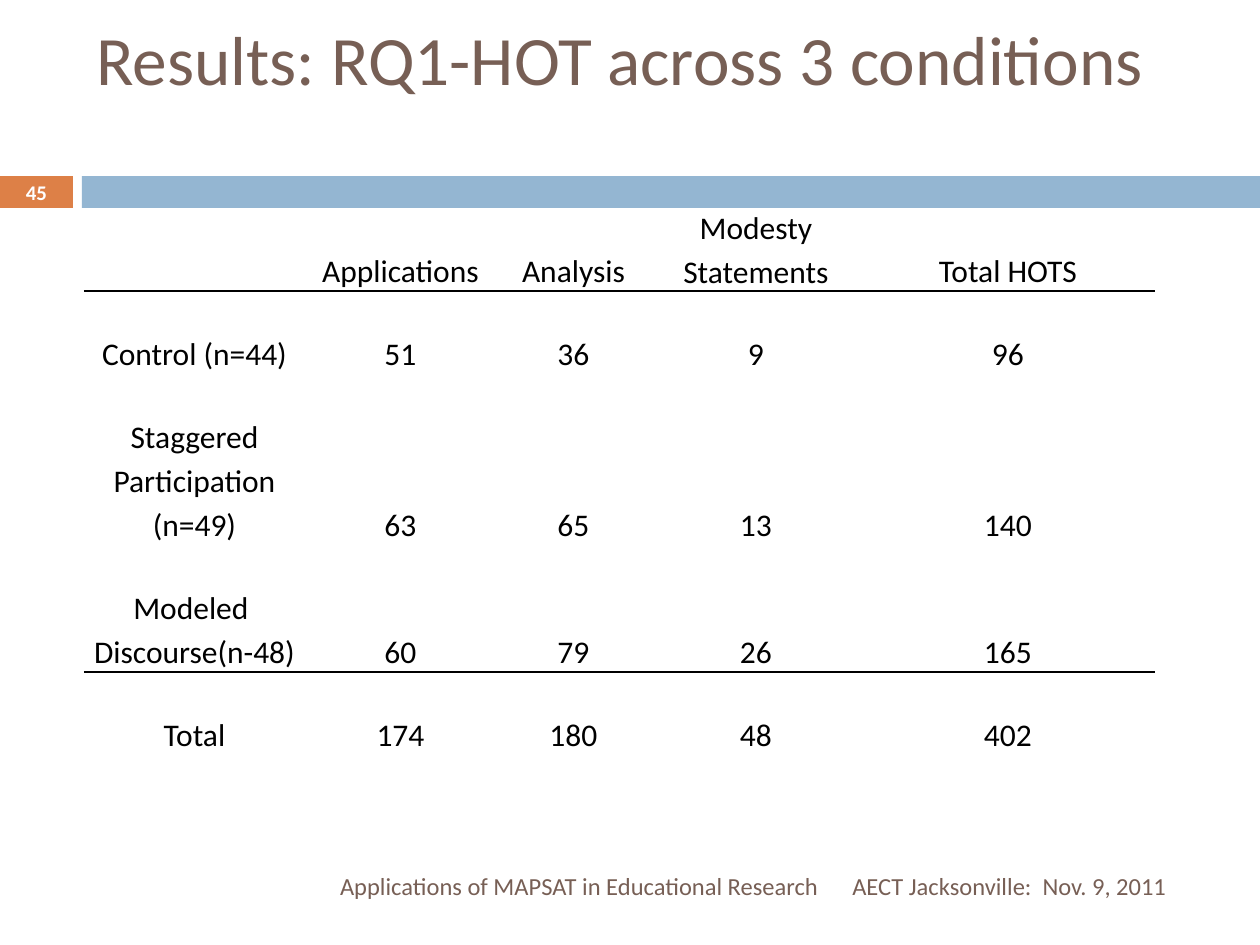
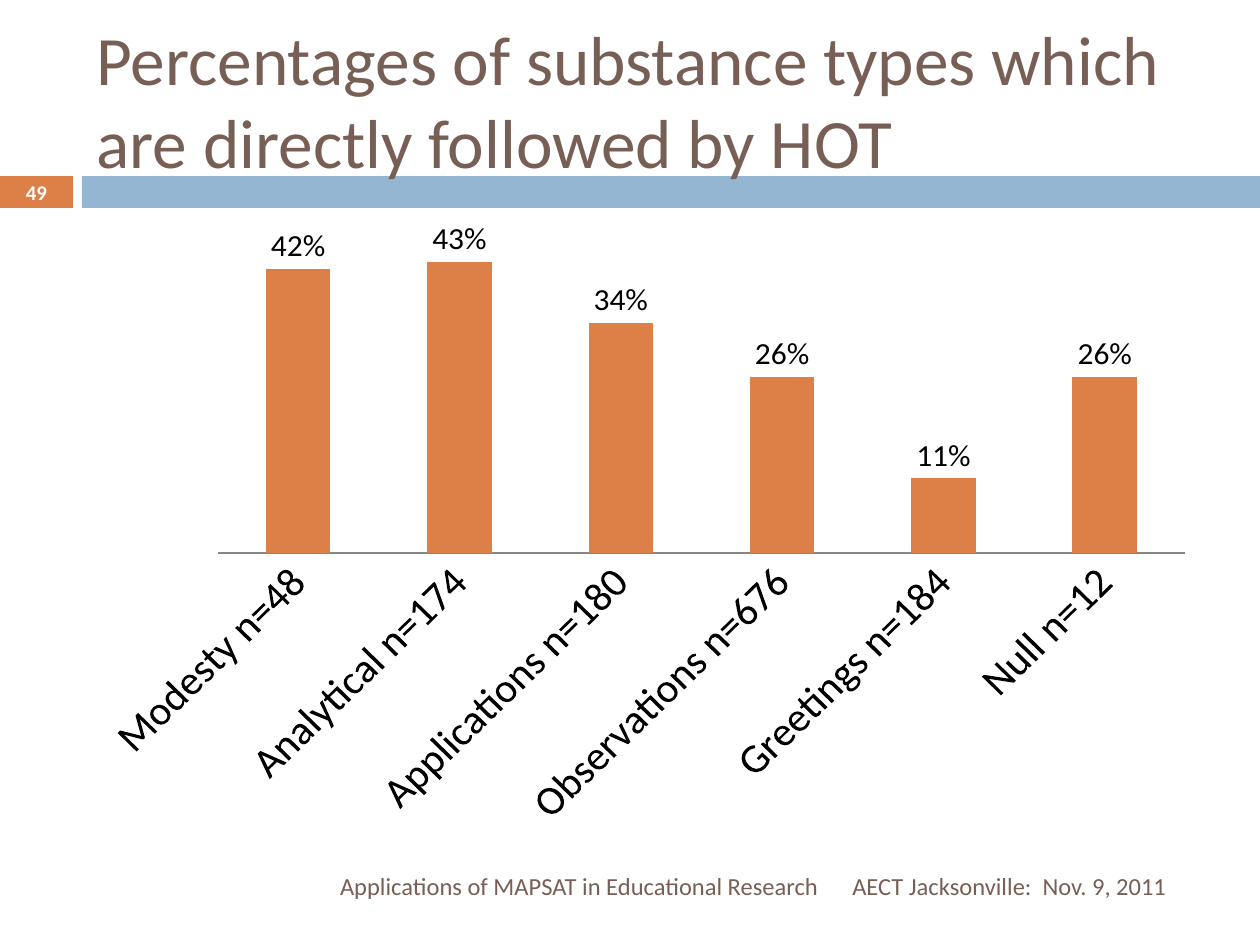
import pptx
import pptx.chart.data
import pptx.dml.color
import pptx.enum.chart
import pptx.enum.shapes
import pptx.enum.text
import pptx.util
from dataclasses import dataclass
from lxml import etree

RGB = pptx.dml.color.RGBColor.from_string
Pt = pptx.util.Pt
ALIGN = pptx.enum.text.PP_ALIGN
ANCHOR = pptx.enum.text.MSO_ANCHOR
PX = 914400 / 126  # EMU in one px


@dataclass(frozen=True)
class Theme:
    font: str = "Calibri"
    brown: str = "775F55"
    orange: str = "DD8047"
    blue: str = "94B6D2"
    white: str = "FFFFFF"
    black: str = "000000"
    grey: str = "868686"
    title: float = 39.6
    body: float = 18
    category: float = 24
    footer: float = 14
    number: float = 11.9


T = Theme()


def px(*lengths):
    return [round(n * PX) for n in lengths]


def write(tf, lines, size, color, align=ALIGN.LEFT, bold=False, spacing=None):
    """Fill a text frame with one paragraph per line."""
    tf.word_wrap = True
    for i, line in enumerate(lines):
        p = tf.paragraphs[0] if i == 0 else tf.add_paragraph()
        p.alignment = align
        p.line_spacing = spacing
        r = p.add_run()
        r.text = line
        r.font.name = T.font
        r.font.size = Pt(size)
        r.font.bold = bold
        r.font.color.rgb = RGB(color)


prs = pptx.Presentation()
prs.slide_width, prs.slide_height = px(1260, 945)

# Shared frame: bands, title, footers, slide number
# The last value is the number of title lines
frames = [
    ("45", "Results: RQ1-HOT across 3 conditions", 1),
    ("49", "Percentages of substance types which are directly followed by HOT", 2),
]
TITLE_LINE = 84
slides = []
for number, title, title_lines in frames:
    s = prs.slides.add_slide(prs.slide_layouts[5])
    slides.append(s)

    for left, width, color in [(0, 73, T.orange), (82, 1178, T.blue)]:
        sp = s.shapes.add_shape(pptx.enum.shapes.MSO_SHAPE.RECTANGLE,
                                *px(left, 176, width, 32))
        sp.shadow.inherit = False
        sp.fill.solid()
        sp.fill.fore_color.rgb = RGB(color)
        sp.line.fill.background()

    # The title lies over the bands; a short one keeps its first line in place
    sp = s.shapes.title
    s.shapes._spTree.append(sp._element)
    sp.left, sp.top, sp.width, sp.height = px(84, 31, 1124, 137)
    tf = sp.text_frame
    tf.auto_size = pptx.enum.text.MSO_AUTO_SIZE.NONE
    tf.vertical_anchor = ANCHOR.MIDDLE
    tf.margin_top, tf.margin_bottom = px(6, 6 + TITLE_LINE * (2 - title_lines))
    write(tf, [title], T.title, T.brown)

    for text, box, size, color, align, bold in [
        ("AECT Jacksonville:  Nov. 9, 2011", (840, 861, 368, 50),
         T.footer, T.brown, ALIGN.LEFT, False),
        ("Applications of MAPSAT in Educational Research", (84, 861, 747, 50),
         T.footer, T.brown, ALIGN.RIGHT, False),
        (number, (0, 175, 73, 34), T.number, T.white, ALIGN.CENTER, True),
    ]:
        tf = s.shapes.add_textbox(*px(*box)).text_frame
        tf.vertical_anchor = ANCHOR.MIDDLE
        if bold:
            tf.margin_top = tf.margin_bottom = 0
        write(tf, [text], size, color, align, bold)

table_slide, chart_slide = slides

# Results table
col_widths = [221, 191, 155, 210, 294]
row_heights = [44, 83, 83, 171, 127, 83]
rows = [
    ["", "", "", "", ""],
    ["", "Applications", "Analysis", "Modesty Statements", "Total HOTS"],
    ["Control (n=44)", "51", "36", "9", "96"],
    ["Staggered Participation\n(n=49)", "63", "65", "13", "140"],
    ["Modeled \nDiscourse(n-48)", "60", "79", "26", "165"],
    ["Total", "174", "180", "48", "402"],
]
ruled = {(1, "lnB"), (2, "lnT"), (4, "lnB"), (5, "lnT")}
A = "http://schemas.openxmlformats.org/drawingml/2006/main"
NO_STYLE = "{2D5ABB26-0587-4C30-8999-92F81FD0307C}"

table = table_slide.shapes.add_table(
    len(rows), len(col_widths),
    *px(84, 160, sum(col_widths), sum(row_heights))).table
table.first_row = table.horz_banding = False
table._tbl.tblPr.find(f"{{{A}}}tableStyleId").text = NO_STYLE
for col, width in zip(table.columns, px(*col_widths)):
    col.width = width
for i, (values, height) in enumerate(zip(rows, px(*row_heights))):
    table.rows[i].height = height
    for cell, value in zip(table.rows[i].cells, values):
        cell.margin_left, cell.margin_right = px(9, 9)
        cell.margin_top = cell.margin_bottom = 0
        cell.vertical_anchor = ANCHOR.BOTTOM
        for side in ["lnL", "lnR", "lnT", "lnB"]:
            ln = etree.SubElement(cell._tc.get_or_add_tcPr(),
                                  f"{{{A}}}{side}", w=str(Pt(1)))
            if (i, side) in ruled:
                fill = etree.SubElement(ln, f"{{{A}}}solidFill")
                etree.SubElement(fill, f"{{{A}}}srgbClr", val=T.black)
            else:
                etree.SubElement(ln, f"{{{A}}}noFill")
        cell.fill.background()
        if value:
            write(cell.text_frame, value.split("\n"), T.body, T.black,
                  ALIGN.CENTER, spacing=1.15)
table.cell(0, 1).merge(table.cell(0, 2))

# Percentage chart
shares = {
    "Modesty n=48": 0.42,
    "Analytical n=174": 0.43,
    "Applications n=180": 0.34,
    "Observations n=676": 0.26,
    "Greetings n=184": 0.11,
    "Null n=12": 0.26,
}
data = pptx.chart.data.CategoryChartData(number_format="0%")
data.categories = list(shares)
data.add_series("Series 1", list(shares.values()))
chart = chart_slide.shapes.add_chart(
    pptx.enum.chart.XL_CHART_TYPE.COLUMN_CLUSTERED,
    *px(84, 220, 1124, 620), data).chart
chart.has_legend = False
chart.has_title = False
chart.font.name = T.font
chart.font.size = Pt(10)
chart.font.color.rgb = RGB(T.black)

plot = chart.plots[0]
plot.gap_width = 150
plot.overlap = -25
plot.vary_by_categories = False
fill = plot.series[0].format.fill
fill.solid()
fill.fore_color.rgb = RGB(T.orange)

plot.has_data_labels = True
labels = plot.data_labels
labels.show_value = True
labels.number_format = "0%"
labels.number_format_is_linked = False
labels.position = pptx.enum.chart.XL_LABEL_POSITION.OUTSIDE_END
labels.font.name = T.font
labels.font.size = Pt(T.body)
labels.font.color.rgb = RGB(T.black)

axis = chart.value_axis
axis.visible = False
axis.has_major_gridlines = False
axis.minimum_scale, axis.maximum_scale = 0, 0.45

axis = chart.category_axis
axis.major_tick_mark = pptx.enum.chart.XL_TICK_MARK.NONE
axis.format.line.color.rgb = RGB(T.grey)
axis.format.line.width = Pt(0.75)
font = axis.tick_labels.font
font.name = T.font
font.size = Pt(T.category)
font.color.rgb = RGB(T.black)
body = axis._element.find(f".//{{{A}}}bodyPr")
body.set("rot", str(-45 * 60000))
body.set("vert", "horz")

prs.save("out.pptx")
